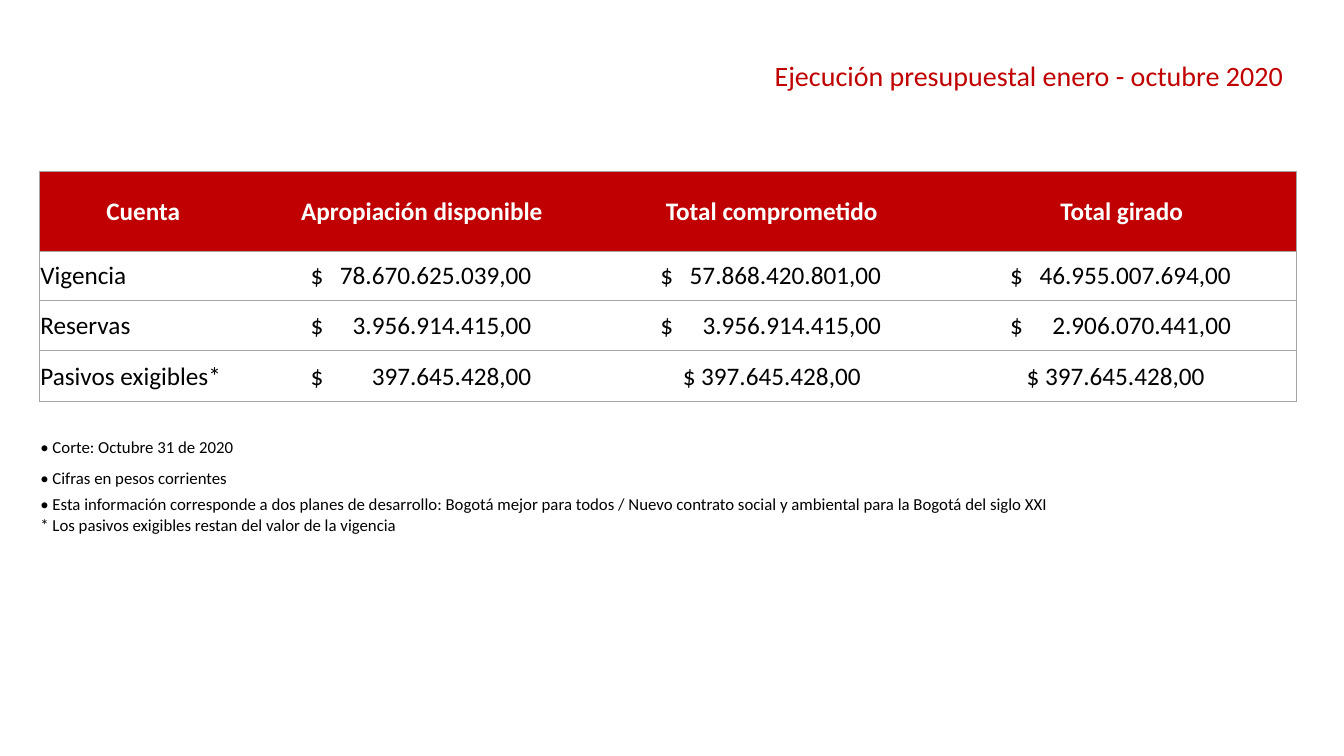
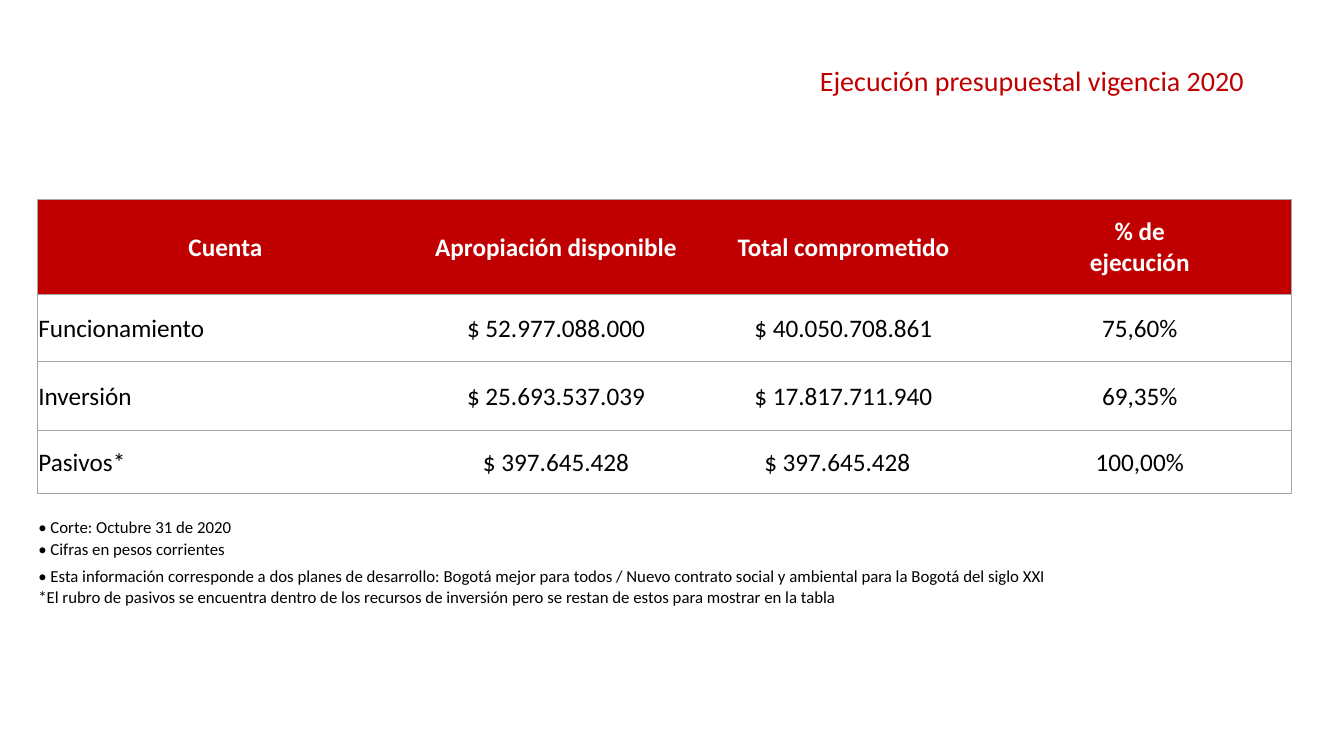
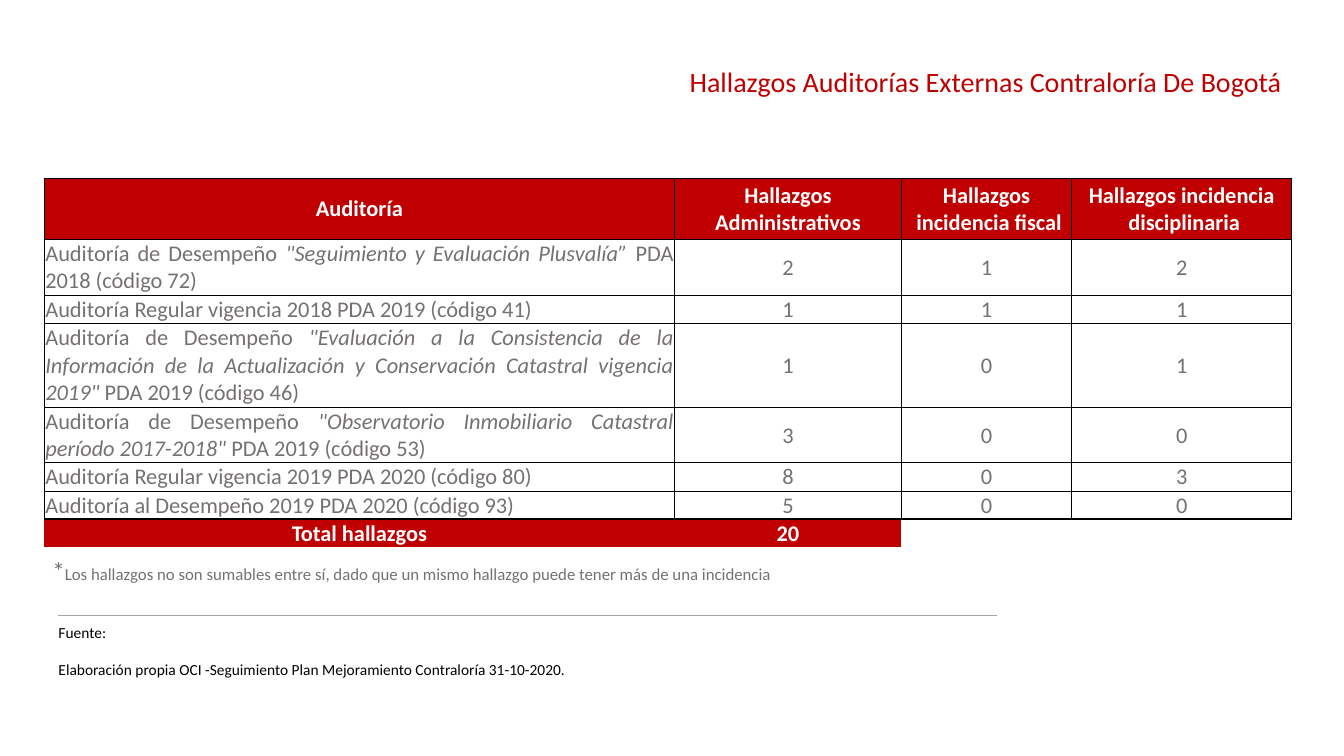
from dataclasses import dataclass

from lxml.etree import SubElement
from pptx import Presentation
from pptx.dml.color import RGBColor
from pptx.enum.text import MSO_ANCHOR, PP_ALIGN
from pptx.oxml.ns import qn
from pptx.util import Inches, Pt

FONT = "Calibri"
RED, GRAY, RULE_GRAY = "C00000", "767171", "A5A5A5"
BLACK, WHITE = "000000", "FFFFFF"
PLAIN_TABLE = "{2D5ABB26-0587-4C30-8999-92F81FD0307C}"
THIN = 0.5
AMOUNT_INDENT, AMOUNT_WIDTH = 0.63, 2.19
LEFT, CENTER, RIGHT, JUSTIFY = PP_ALIGN.LEFT, PP_ALIGN.CENTER, PP_ALIGN.RIGHT, PP_ALIGN.JUSTIFY


@dataclass(frozen=True)
class Look:
    """Format of a table row; only the first column may differ in alignment."""
    size: float = 18
    color: str = BLACK
    bold: bool = False
    fill: str | None = None
    first_align: PP_ALIGN = LEFT
    first_anchor: MSO_ANCHOR = MSO_ANCHOR.MIDDLE
    ruled: bool = False
    inset: float = 0.01


@dataclass(frozen=True)
class Row:
    height: float
    look: Look
    texts: tuple[str, ...] = ()
    span: int = 1
    end_gaps: tuple[float, ...] = ()


@dataclass(frozen=True)
class Rules:
    color: str = RULE_GRAY
    frame_width: float = THIN
    inner_columns: bool = False


HEAD = Look(color=WHITE, bold=True, fill=RED, first_align=CENTER, ruled=True)
BODY = Look(ruled=True)
NOTE = Look(size=12, fill=WHITE)
SPACER = Look(fill=WHITE)
AUDIT_HEAD = Look(size=16, color=WHITE, bold=True, fill=RED, first_align=CENTER, ruled=True)
AUDIT = Look(size=16, color=GRAY, first_align=JUSTIFY, first_anchor=MSO_ANCHOR.TOP, ruled=True)
TOTAL = Look(size=16, color=WHITE, bold=True, fill=RED, first_align=CENTER,
             first_anchor=MSO_ANCHOR.TOP)
SOURCE = Look(size=11, first_anchor=MSO_ANCHOR.BOTTOM, inset=0)

CUT_OFF = "• Corte: Octubre 31 de 2020"
CURRENCY = "• Cifras en pesos corrientes"
PLANS = ("• Esta información corresponde a dos planes de desarrollo: Bogotá mejor para todos / "
         "Nuevo contrato social y ambiental para la Bogotá del siglo XXI")


def rgb(color: str) -> RGBColor:
    return RGBColor.from_string(color)


def add_run(paragraph, text: str, *, size: float, color: str, bold=False, italic=False) -> None:
    run = paragraph.add_run()
    run.text = text
    run.font.name, run.font.size = FONT, Pt(size)
    run.font.bold, run.font.italic = bold, italic
    run.font.color.rgb = rgb(color)


def add_text_box(slide, left: float, top: float, width: float, height: float, *,
                 align=LEFT, wrap=True):
    """Return the empty paragraph of a new text box."""
    box = slide.shapes.add_textbox(Inches(left), Inches(top), Inches(width), Inches(height))
    box.text_frame.word_wrap = wrap
    paragraph = box.text_frame.paragraphs[0]
    paragraph.alignment = align
    return paragraph


def add_title(slide, text: str, left: float, top: float, width: float, *,
              align=CENTER, wrap=False) -> None:
    paragraph = add_text_box(slide, left, top, width, 0.44, align=align, wrap=wrap)
    add_run(paragraph, text, size=20, color=RED)


def write_cell(cell, text: str, look: Look, *, first: bool, end_gap: float) -> None:
    """Fill a cell; newlines part paragraphs, underscores enclose italics."""
    cell.margin_left = cell.margin_top = Inches(look.inset)
    cell.margin_right, cell.margin_bottom = Inches(look.inset + end_gap), 0
    cell.vertical_anchor = look.first_anchor if first else MSO_ANCHOR.MIDDLE
    if not text:
        SubElement(cell.text_frame.paragraphs[0]._p, qn("a:endParaRPr"), sz="600")
        return
    for number, line in enumerate(text.split("\n")):
        frame = cell.text_frame
        paragraph = frame.add_paragraph() if number else frame.paragraphs[0]
        paragraph.alignment = look.first_align if first else CENTER
        if "\t" in line:
            paragraph.alignment = LEFT
            cell.margin_left = Inches(AMOUNT_INDENT)
            tabs = SubElement(paragraph._p.get_or_add_pPr(), qn("a:tabLst"))
            SubElement(tabs, qn("a:tab"), pos=str(Inches(AMOUNT_WIDTH)), algn="r")
        for part, piece in enumerate(line.split("_")):
            if piece:
                add_run(paragraph, piece, size=look.size, color=look.color,
                        bold=look.bold, italic=part % 2 == 1)


def set_border(cell, side: str, color: str, width: float) -> None:
    """Draw one side of a cell, or clear it when the width is zero."""
    line = SubElement(cell._tc.get_or_add_tcPr(), qn(f"a:ln{side}"), w=str(Pt(width)))
    if width:
        SubElement(SubElement(line, qn("a:solidFill")), qn("a:srgbClr"), val=color)
    else:
        SubElement(line, qn("a:noFill"))


def add_table(slide, left: float, top: float, columns: list[float], rows: list[Row],
              rules: Rules = Rules()) -> None:
    frame = slide.shapes.add_table(
        len(rows), len(columns), Inches(left), Inches(top),
        Inches(sum(columns)), Inches(sum(row.height for row in rows)))
    table = frame.table
    table.first_row = table.horz_banding = False
    table._tbl.tblPr.find(qn("a:tableStyleId")).text = PLAIN_TABLE
    for column, width in zip(table.columns, columns):
        column.width = Inches(width)

    ruled = [index for index, row in enumerate(rows) if row.look.ruled]
    ends = (ruled[0], ruled[-1] + 1) if ruled else (0, -1)

    def horizontal(edge: int) -> float:
        if edge in ends:
            return rules.frame_width
        return THIN if ends[0] < edge < ends[1] else 0

    def vertical(edge: int, row: Row) -> float:
        if not row.look.ruled:
            return 0
        if edge == 0:
            return rules.frame_width
        return THIN if rules.inner_columns or edge == len(columns) else 0

    for y, row in enumerate(rows):
        table.rows[y].height = Inches(row.height)
        if row.span > 1:
            table.cell(y, 0).merge(table.cell(y, row.span - 1))
        for x in range(len(columns)):
            cell = table.cell(y, x)
            text = row.texts[x] if x < len(row.texts) else ""
            gap = row.end_gaps[x] if row.end_gaps else 0
            write_cell(cell, text, row.look, first=x == 0, end_gap=gap)
            widths = {"L": vertical(x, row), "R": vertical(x + 1, row),
                      "T": horizontal(y), "B": horizontal(y + 1)}
            for side, width in widths.items():
                set_border(cell, side, rules.color, width)
            if row.look.fill and (text or row.look.fill == WHITE):
                cell.fill.solid()
                cell.fill.fore_color.rgb = rgb(row.look.fill)
            else:
                cell.fill.background()


def build_accounts(slide) -> None:
    add_table(slide, 0.39, 0.97, [2.06, 3.47, 3.47, 3.47], [
        Row(0.32, SPACER, span=4),
        Row(0.41, SPACER),
        Row(0.79, HEAD, ("Cuenta", "Apropiación disponible", "Total comprometido",
                         "Total girado")),
        Row(0.49, BODY, ("Vigencia", "$\t78.670.625.039,00", "$\t57.868.420.801,00",
                         "$\t46.955.007.694,00")),
        Row(0.5, BODY, ("Reservas", "$\t3.956.914.415,00", "$\t3.956.914.415,00",
                        "$\t2.906.070.441,00")),
        Row(0.5, BODY, ("Pasivos exigibles*", "$\t397.645.428,00", "$ 397.645.428,00",
                        "$ 397.645.428,00"), end_gaps=(0, 0, 0, 0.12)),
        Row(0.3, SPACER),
        Row(0.31, NOTE, (CUT_OFF,), span=2),
        Row(0.31, NOTE, (CURRENCY,), span=2),
        Row(0.41, NOTE, (f"{PLANS}\n* Los pasivos exigibles restan del valor de la vigencia",),
            span=4),
    ])
    add_title(slide, "Ejecución presupuestal enero - octubre 2020", 7.56, 0.53, 5.29)


def build_execution(slide) -> None:
    add_table(slide, 0.37, 1.34, [3.73, 2.83, 2.87, 3.01], [
        Row(0.42, SPACER, span=4),
        Row(0.22, SPACER),
        Row(0.94, HEAD, ("Cuenta", "Apropiación disponible", "Total comprometido",
                         "% de\nejecución")),
        Row(0.67, BODY, ("Funcionamiento", "$ 52.977.088.000", "$ 40.050.708.861", "75,60%")),
        Row(0.68, BODY, ("Inversión", "$ 25.693.537.039", "$ 17.817.711.940", "69,35%")),
        Row(0.63, BODY, ("Pasivos*", "$ 397.645.428", "$ 397.645.428", "100,00%"),
            end_gaps=(0, 0, 0.12, 0)),
        Row(0.22, SPACER),
        Row(0.22, NOTE, (CUT_OFF,)),
        Row(0.22, NOTE, (CURRENCY,)),
        Row(0.53, NOTE, (f"{PLANS}\n*El rubro de pasivos se encuentra dentro de los recursos de "
                         "inversión pero se restan de estos para mostrar en la tabla",), span=4),
    ])
    add_title(slide, "Ejecución presupuestal vigencia 2020", 8.01, 0.58, 4.45)


def build_findings(slide) -> None:
    add_table(slide, 0.58, 6.1, [1.26, 1.26, 1.14, 2.13, 3.52], [
        Row(0.28, SOURCE, ("Fuente:",)),
        Row(0.36, SOURCE, ("Elaboración propia OCI -Seguimiento Plan Mejoramiento Contraloría "
                           "31-10-2020.",), span=5),
    ])
    add_table(slide, 0.44, 1.77, [6.25, 2.25, 1.69, 2.18], [
        Row(0.6, AUDIT_HEAD, ("Auditoría", "Hallazgos\nAdministrativos",
                              "Hallazgos\n incidencia fiscal",
                              "Hallazgos incidencia\n disciplinaria")),
        Row(0.56, AUDIT, ('Auditoría de Desempeño _"Seguimiento y Evaluación Plusvalía”_ '
                          "PDA 2018 (código 72)", "2", "1", "2")),
        Row(0.28, AUDIT, ("Auditoría Regular vigencia 2018 PDA 2019 (código 41)", "1", "1", "1")),
        Row(0.83, AUDIT, ('Auditoría de Desempeño _"Evaluación a la Consistencia de la '
                          "Información de la Actualización y Conservación Catastral vigencia "
                          '2019"_ PDA 2019 (código 46)', "1", "0", "1")),
        Row(0.55, AUDIT, ('Auditoría de Desempeño _"Observatorio Inmobiliario Catastral período '
                          '2017-2018"_ PDA 2019 (código 53)', "3", "0", "0")),
        Row(0.28, AUDIT, ("Auditoría Regular vigencia 2019 PDA 2020 (código 80)", "8", "0", "3")),
        Row(0.28, AUDIT, ("Auditoría al Desempeño 2019 PDA 2020 (código 93)", "5", "0", "0")),
        Row(0.28, TOTAL, ("Total hallazgos", "20")),
    ], Rules(color=BLACK, frame_width=1, inner_columns=True))
    remark = add_text_box(slide, 0.42, 5.46, 8.52, 0.4)
    add_run(remark, "*", size=18, color=GRAY)
    add_run(remark, "Los hallazgos no son sumables entre sí, dado que un mismo hallazgo puede "
            "tener más de una incidencia", size=12, color=GRAY)
    add_title(slide, "Hallazgos Auditorías Externas Contraloría De Bogotá", 4.68, 0.59, 8.13,
              align=RIGHT, wrap=True)


def main() -> None:
    presentation = Presentation()
    presentation.slide_width, presentation.slide_height = Inches(13.33), Inches(7.5)
    for build in (build_accounts, build_execution, build_findings):
        build(presentation.slides.add_slide(presentation.slide_layouts[6]))
    presentation.save("out.pptx")


if __name__ == "__main__":
    main()
